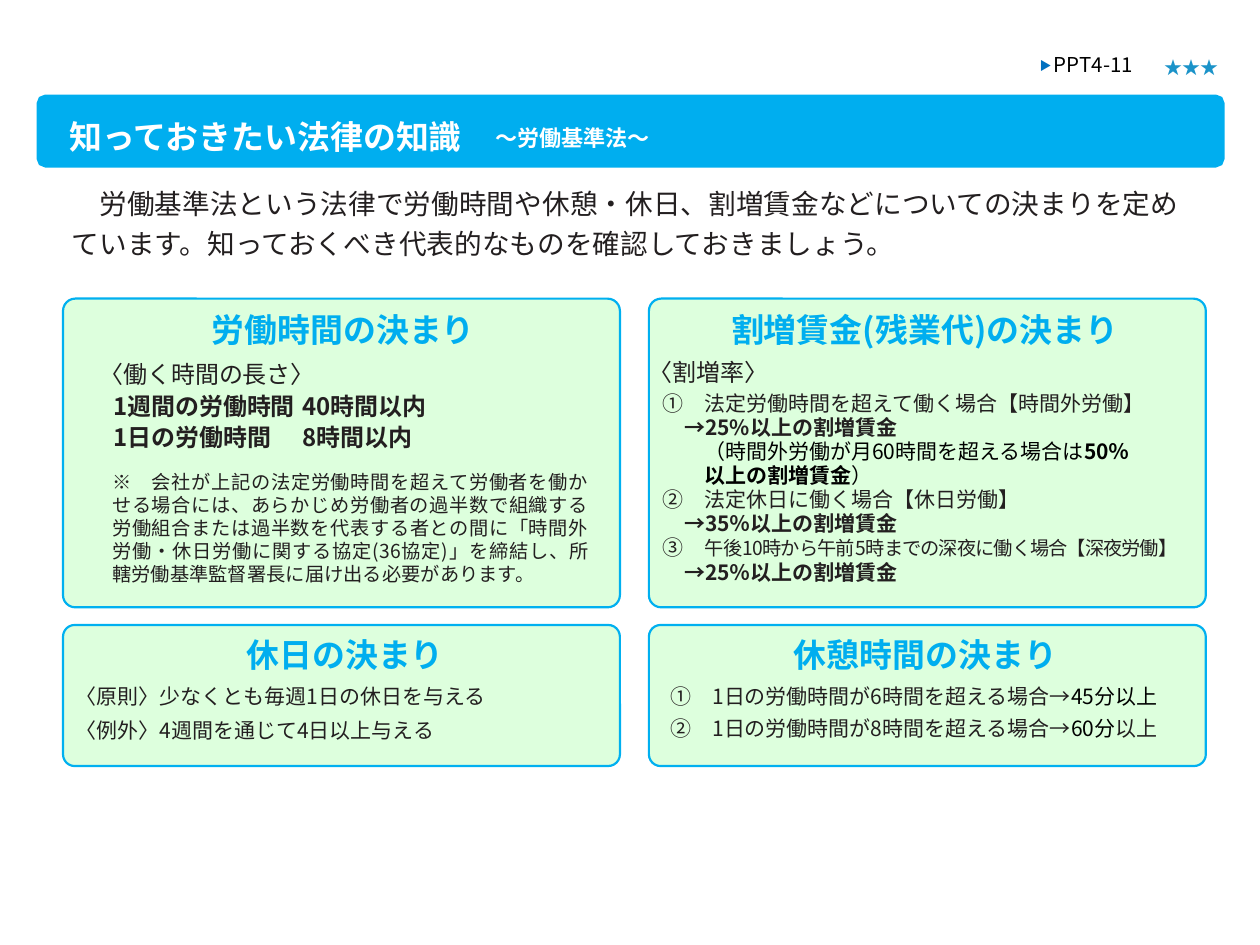
from lxml import etree
from pptx import Presentation
from pptx.dml.color import RGBColor
from pptx.enum.shapes import MSO_SHAPE
from pptx.enum.text import MSO_ANCHOR, PP_ALIGN
from pptx.oxml.ns import qn
from pptx.util import Inches, Pt

ROUND = MSO_SHAPE.ROUNDED_RECTANGLE
TOP = MSO_ANCHOR.TOP
LEFT, MID, JUST = PP_ALIGN.LEFT, PP_ALIGN.CENTER, PP_ALIGN.JUSTIFY
FACE = "Noto Sans CJK JP"
INK, BLACK, WHITE = "231F20", "000000", "FFFFFF"
CYAN, EDGE, MINT = "00AEEF", "00B0F0", "DDFFDD"


def tint(code):
    return RGBColor.from_string(code)


class Page:
    def __init__(self, slide):
        self.slide = slide

    def banner(self, x, y, w, h):
        curve = [(0.16, 0), (0.07, 0), (0.02, 0.02), (0, 0.07), (0, 0.16)]
        back = curve[::-1]
        dots = [(x + a, y + b) for a, b in curve]
        dots += [(x + a, y + h - b) for a, b in back]
        dots += [(x + w - a, y + h - b) for a, b in curve]
        dots += [(x + w - a, y + b) for a, b in back]
        dots = [(Inches(a), Inches(b)) for a, b in dots]
        form = self.slide.shapes.build_freeform(*dots[0])
        form.add_line_segments(dots[1:])
        shape = form.convert_to_shape()
        shape.shadow.inherit = False
        shape.fill.solid()
        shape.fill.fore_color.rgb = tint(CYAN)
        shape.line.fill.background()

    def card(self, x, y, w, h, bend):
        shape = self.slide.shapes.add_shape(
            ROUND, Inches(x), Inches(y), Inches(w), Inches(h))
        shape.adjustments[0] = bend
        shape.shadow.inherit = False
        shape.fill.solid()
        shape.fill.fore_color.rgb = tint(MINT)
        shape.line.color.rgb = tint(EDGE)
        shape.line.width = Pt(1.25)

    def title(self, x, y, w, h, runs, **look):
        shape = self.slide.shapes.title
        self.slide.shapes._spTree.append(shape._element)
        shape.left, shape.top = Inches(x), Inches(y)
        shape.width, shape.height = Inches(w), Inches(h)
        frame = self.frame(shape, 0.02)
        self.para(frame.paragraphs[0], runs, **look)

    def box(self, x, y, w, h, paras, pad=0.08, wrap=True):
        shape = self.slide.shapes.add_textbox(
            Inches(x), Inches(y), Inches(w), Inches(h))
        frame = self.frame(shape, pad, wrap)
        for i, (runs, look) in enumerate(paras):
            para = frame.add_paragraph() if i else frame.paragraphs[0]
            self.para(para, runs, **look)

    def frame(self, shape, pad, wrap=True):
        frame = shape.text_frame
        frame.word_wrap = wrap
        frame.vertical_anchor = TOP
        frame.margin_left = frame.margin_right = frame.margin_bottom = 0
        frame.margin_top = Inches(pad)
        return frame

    def para(self, para, runs, size=12, color=INK, bold=False, align=LEFT,
             left=0, first=0, before=0, lead=None, tab=None):
        para.alignment = align
        props = para._p.get_or_add_pPr()
        props.set("marL", str(Inches(left)))
        props.set("indent", str(Inches(first)))
        if before:
            para.space_before = Pt(before)
        if lead:
            para.line_spacing = lead
        if tab:
            tabs = etree.SubElement(props, qn("a:tabLst"))
            etree.SubElement(tabs, qn("a:tab"), pos=str(Inches(tab)), algn="l")
        font = para.font
        font.size, font.bold = Pt(size), bold
        font.color.rgb = tint(color)
        font.name = FACE
        etree.SubElement(font._element, qn("a:ea"), typeface=FACE)
        for part in [runs] if isinstance(runs, str) else runs:
            text, look = (part, {}) if isinstance(part, str) else part
            self.run(para, text, **look)

    def run(self, para, text, size=None, color=None, bold=None, lift=0, gap=0):
        run = para.add_run()
        run.text = text
        if size:
            run.font.size = Pt(size)
        if color:
            run.font.color.rgb = tint(color)
        if bold is not None:
            run.font.bold = bold
        props = run._r.get_or_add_rPr()
        if lift:
            props.set("baseline", str(lift * 1000))
        if gap:
            props.set("spc", str(round(gap * 100)))


def head(text):
    return text, dict(size=18.8, color=CYAN, bold=True, align=MID)


def rate(runs, left=0.11, lead=13.8, **look):
    return runs, dict(left=left, lead=Pt(lead), **look)


def main():
    deck = Presentation()
    deck.slide_width, deck.slide_height = Inches(10), Inches(7.5)
    page = Page(deck.slides.add_slide(deck.slide_layouts[5]))

    page.banner(0.29, 0.75, 9.43, 0.58)
    page.title(0.55, 0.86, 5.53, 0.33,
               ["知っておきたい法律の知識　",
                ("～労働基準法～", dict(size=21.8, lift=7))],
               size=18.8, color=WHITE, bold=True)
    page.box(0.57, 1.41, 9.01, 0.62, [
        ("労働基準法という法律で労働時間や休憩・休日、割増賃金などについての"
         "決まりを定めています。知っておくべき代表的なものを確認しておきましょう。",
         dict(size=15.8, first=0.22, lead=1.23))], 0.01)
    page.box(8.25, 0.4, 0.99, 0.21, [
        ([("▶ ", dict(color="0070C0", lift=9)), "PPT4-11"],
         dict(size=11.7, color=BLACK))], 0.01)
    page.box(9.24, 0.4, 0.43, 0.27, [
        ("★★★", dict(size=10.3, color="1B93C9"))], 0.05, False)

    for x in (0.5, 5.15):
        page.card(x, 2.37, 4.42, 2.45, 0.04)
        page.card(x, 4.96, 4.42, 1.12, 0.083)

    hours = dict(size=13.7, bold=True, left=0.11, before=1.6)
    page.box(0.79, 2.38, 3.87, 1.23, [
        head("労働時間の決まり"),
        ("〈働く時間の長さ〉", dict(size=13.7, before=6)),
        ("1週間の労働時間\t40時間以内", dict(hours, tab=1.84)),
        ("1日の労働時間\t8時間以内", dict(hours, tab=1.92))])
    page.box(0.89, 3.72, 3.78, 0.94, [
        ("※　会社が上記の法定労働時間を超えて労働者を働かせる場合には、"
         "あらかじめ労働者の過半数で組織する労働組合または過半数を代表する者との間に"
         "「時間外労働・休日労働に関する協定(36協定)」を締結し、"
         "所轄労働基準監督署長に届け出る必要があります。",
         dict(size=11, align=JUST))], 0.01)

    page.box(5.15, 2.38, 4.38, 2.3, [
        head("割増賃金(残業代)の決まり"),
        ("〈割増率〉", dict(size=13.7, before=4.9)),
        rate("①　法定労働時間を超えて働く場合【時間外労働】", lead=14.3, before=2),
        rate("→25%以上の割増賃金", 0.28, bold=True),
        rate(["（時間外労働が月60時間を超える場合は", ("50％", dict(bold=True))],
             0.44, color=BLACK),
        rate([("以上の割増賃金", dict(bold=True)), "）"], 0.44, color=BLACK),
        rate("②　法定休日に働く場合【休日労働】"),
        rate("→35％以上の割増賃金", 0.28, bold=True),
        rate(["③　", ("午後10時から午前5時までの深夜に働く場合【深夜労働】",
                     dict(size=11, gap=-0.6))]),
        rate("→25％以上の割増賃金", 0.28, 14.3, bold=True)])

    page.box(0.6, 4.96, 4.28, 0.94, [
        head("休日の決まり"),
        ("〈原則〉少なくとも毎週1日の休日を与える", dict(before=5.1)),
        ("〈例外〉4週間を通じて4日以上与える", dict(before=5.1))])
    dark = dict(color=BLACK)
    page.box(5.15, 4.96, 4.39, 0.93, [
        head("休憩時間の決まり"),
        (["①　1日の労働時間が6時間を超える場合→", ("45分以上", dark)],
         dict(left=0.17, before=5.1)),
        (["②　1日の労働時間が8時間を超える場合→", ("60分", dark), "以上"],
         dict(left=0.17, before=4.1))])

    deck.save("out.pptx")


if __name__ == "__main__":
    main()
